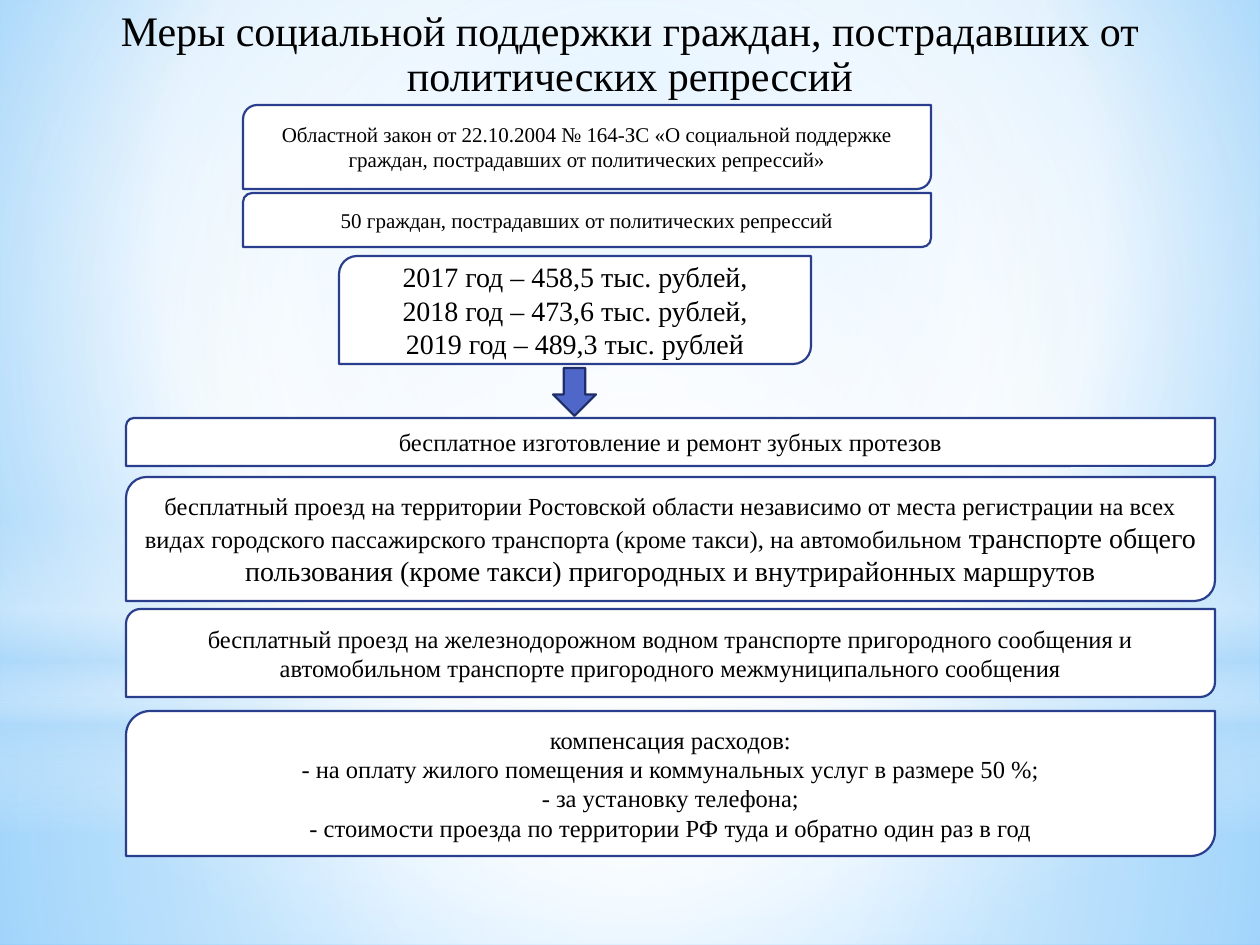
from lxml.etree import SubElement
from pptx import Presentation
from pptx.dml.color import RGBColor
from pptx.enum.shapes import MSO_SHAPE
from pptx.enum.text import MSO_ANCHOR, PP_ALIGN
from pptx.oxml.ns import qn
from pptx.util import Pt

PX = 914400 / 126
COLORS = {
    "text": "000000", "white": "FFFFFF", "border": "2A3E8E",
    "arrow": "4E67C8", "arrow_border": "1F2E69",
    "sky": "9ED5FF", "deep_sky": "5BB9FF", "mist": "B4DCFA",
}
CENTER = (50, 50, 50, 50)


def px(n):
    return round(n * PX)


def rgb(name):
    return RGBColor.from_string(COLORS[name])


class Deck:
    """Holds the slide style and the slide being built."""

    font = "Times New Roman"
    line_width = Pt(1.25)

    def __init__(self, width, height):
        self.prs = Presentation()
        self.prs.slide_width, self.prs.slide_height = px(width), px(height)
        self.s = self.prs.slides.add_slide(self.prs.slide_layouts[6])

    def gradient(self, fill, root, stops, focus=None):
        fill.gradient()
        grad = root.find(".//" + qn("a:gradFill"))
        for child in list(grad):
            grad.remove(child)
        gs_list = SubElement(grad, qn("a:gsLst"))
        for pos, color, alpha in stops:
            gs = SubElement(gs_list, qn("a:gs"), pos=str(pos * 1000))
            clr = SubElement(gs, qn("a:srgbClr"), val=COLORS[color])
            if alpha < 100:
                SubElement(clr, qn("a:alpha"), val=str(alpha * 1000))
        if focus:
            radial = SubElement(grad, qn("a:path"), path="circle")
            sides = {k: str(v * 1000) for k, v in zip("ltrb", focus)}
            SubElement(radial, qn("a:fillToRect"), **sides)
        else:
            SubElement(grad, qn("a:lin"), ang="5400000", scaled="0")

    def background(self, stops, focus):
        self.gradient(self.s.background.fill, self.s.element, stops, focus)

    def shape(self, kind, box):
        sp = self.s.shapes.add_shape(kind, *map(px, box))
        sp.shadow.inherit = False
        return sp

    def glow(self, kind, box, stops, focus=None):
        sp = self.shape(kind, box)
        sp.line.fill.background()
        self.gradient(sp.fill, sp.element, stops, focus)

    def outlined(self, kind, box, fill, line):
        sp = self.shape(kind, box)
        sp.fill.solid()
        sp.fill.fore_color.rgb = rgb(fill)
        sp.line.color.rgb = rgb(line)
        sp.line.width = self.line_width
        return sp

    def format_run(self, r, size):
        r.font.name, r.font.size = self.font, Pt(size)
        r.font.color.rgb = rgb("text")

    def set_text(self, tf, text, size):
        tf.word_wrap = True
        tf.text = text
        for p in tf.paragraphs:
            p.alignment = PP_ALIGN.CENTER
            for r in p.runs:
                self.format_run(r, size)

    def title(self, box, text, size):
        tf = self.s.shapes.add_textbox(*map(px, box)).text_frame
        self.set_text(tf, text, size)
        tf.paragraphs[0].line_spacing = 0.9

    def card(self, box, text, size, tail="", tail_size=16):
        sp = self.outlined(MSO_SHAPE.ROUND_2_DIAG_RECTANGLE, box, "white", "border")
        tf = sp.text_frame
        tf.vertical_anchor = MSO_ANCHOR.MIDDLE
        self.set_text(tf, text, size)
        if tail:
            r = tf.paragraphs[-1].add_run()
            r.text = tail
            self.format_run(r, tail_size)

    def arrow(self, box):
        self.outlined(MSO_SHAPE.DOWN_ARROW, box, "arrow", "arrow_border")


def main():
    deck = Deck(1260, 945)
    deck.background([(0, "sky", 100), (60, "white", 100), (100, "deep_sky", 100)],
                    (20, 10, 20, 60))
    deck.glow(MSO_SHAPE.RECTANGLE, (0, 703, 1260, 242),
              [(0, "white", 91), (37, "white", 76), (100, "mist", 79)], CENTER)
    deck.glow(MSO_SHAPE.RECTANGLE, (0, 0, 1260, 703),
              [(0, "white", 89), (48, "white", 62), (100, "mist", 79)], CENTER)
    deck.glow(MSO_SHAPE.RECTANGLE, (0, 519, 1260, 315),
              [(0, "white", 0), (29, "white", 30), (45, "mist", 40),
               (55, "white", 26), (65, "mist", 60), (100, "white", 0)])
    deck.glow(MSO_SHAPE.OVAL, (0, 221, 1260, 703),
              [(0, "white", 100), (56, "white", 0)], CENTER)

    deck.title((87, 4, 1086, 81),
               "Меры социальной поддержки граждан, пострадавших от политических репрессий", 24)
    deck.card((243, 105, 688, 84),
              "Областной закон от 22.10.2004 № 164-ЗС «О социальной поддержке граждан, "
              "пострадавших от политических репрессий»", 12)
    deck.card((243, 193, 688, 54), "50 граждан, пострадавших от политических репрессий", 12)
    deck.card((339, 256, 472, 108),
              "2017 год – 458,5 тыс. рублей,\n2018 год – 473,6 тыс. рублей,\n"
              "2019 год – 489,3 тыс. рублей", 16)
    deck.arrow((553, 368, 43, 48))

    measures = [
        (418, 48, "бесплатное изготовление и ремонт зубных протезов", ""),
        (477, 124,
         "бесплатный проезд на территории Ростовской области независимо от места "
         "регистрации на всех видах городского пассажирского транспорта (кроме такси), "
         "на автомобильном ",
         "транспорте общего пользования (кроме такси) пригородных и внутрирайонных маршрутов"),
        (609, 88,
         "бесплатный проезд на железнодорожном водном транспорте пригородного сообщения и\n"
         "автомобильном транспорте пригородного межмуниципального сообщения", ""),
        (711, 145,
         "компенсация расходов:\n"
         "- на оплату жилого помещения и коммунальных услуг в размере 50 %;\n"
         "- за установку телефона;\n"
         "- стоимости проезда по территории РФ туда и обратно один раз в год", ""),
    ]
    for top, height, text, tail in measures:
        deck.card((126, top, 1089, height), text, 14, tail)

    deck.prs.save("out.pptx")


if __name__ == "__main__":
    main()
